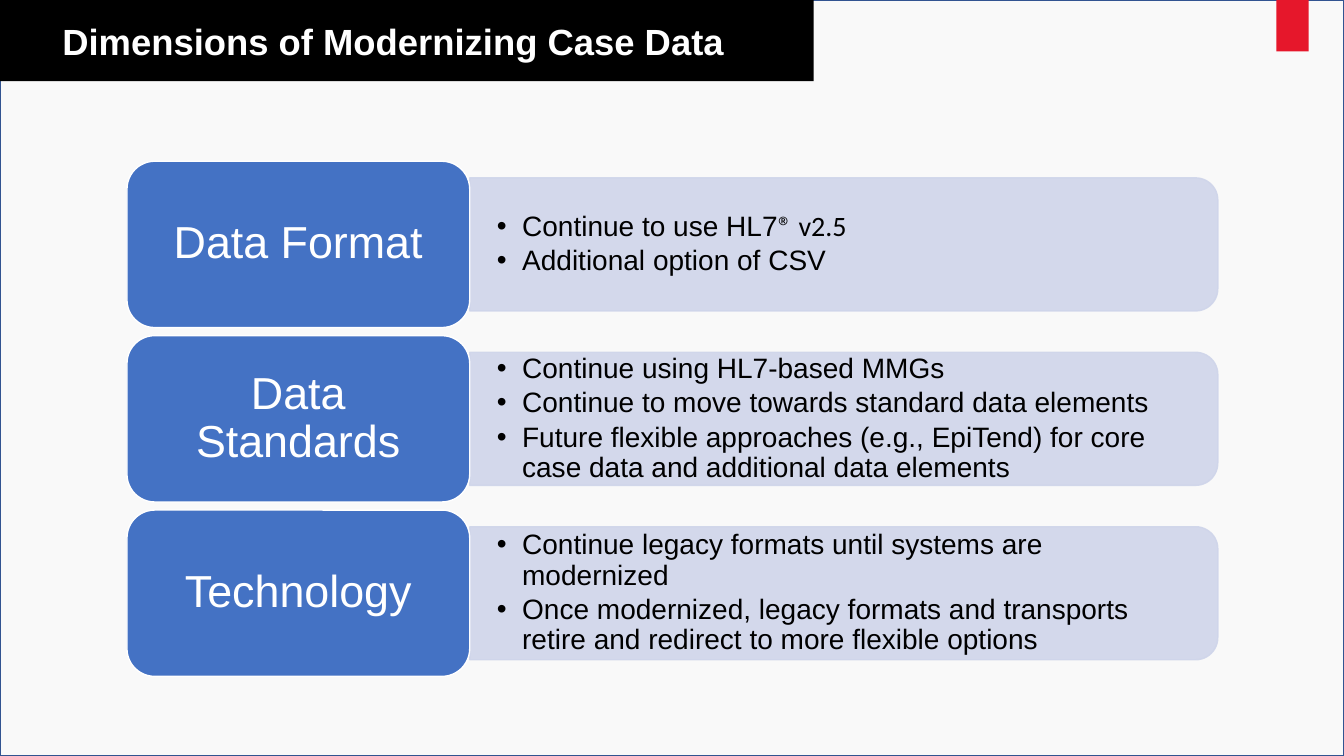
import pptx
import pptx.dml.color
import pptx.enum.shapes
import pptx.enum.text
import pptx.oxml.ns
import pptx.util
from lxml import etree

RGBColor = pptx.dml.color.RGBColor
MSO_SHAPE = pptx.enum.shapes.MSO_SHAPE
PP_ALIGN = pptx.enum.text.PP_ALIGN
qn = pptx.oxml.ns.qn
Inches = pptx.util.Inches
Pt = pptx.util.Pt

PAPER = RGBColor(0xF9, 0xF9, 0xF9)
FRAME = RGBColor(0x32, 0x54, 0x91)
RED = RGBColor(0xE6, 0x17, 0x2B)
BLACK = RGBColor(0x00, 0x00, 0x00)
WHITE = RGBColor(0xFF, 0xFF, 0xFF)
BLUE = RGBColor(0x44, 0x72, 0xC4)
PALE_BLUE = RGBColor(0xCF, 0xD5, 0xEA)

SLIDE_WIDTH = Inches(13.33)
SLIDE_HEIGHT = Inches(7.5)

# Row grid, in percent of the slide's width and height
FIRST_ROW, ROW_PITCH = 21.33, 23.07
CARD_LEFT, CARD_WIDTH, CARD_HEIGHT = 9.45, 25.5, 22
PANEL_LEFT, PANEL_WIDTH, PANEL_HEIGHT = 34.95, 55.66, 17.6

# Each bullet is a list of (text, font) runs
DIMENSIONS = [
    ("Data Format", [
        [("Continue to use HL7", "Arial"), ("® v2.5", "Calibri")],
        [("Additional option of CSV", "Arial")],
    ]),
    ("Data Standards", [
        [("Continue using HL7-based MMGs", "Arial")],
        [("Continue to move towards standard data elements", "Arial")],
        [("Future flexible approaches (e.g., EpiTend) for core case data "
          "and additional data elements", "Arial")],
    ]),
    ("Technology", [
        [("Continue legacy formats until systems are modernized", "Arial")],
        [("Once modernized, legacy formats and transports retire and "
          "redirect to more flexible options", "Arial")],
    ]),
]


def box(left, top, width, height):
    """Turn percentages of the slide into a left, top, width, height box."""
    return (round(SLIDE_WIDTH * left / 100), round(SLIDE_HEIGHT * top / 100),
            round(SLIDE_WIDTH * width / 100), round(SLIDE_HEIGHT * height / 100))


def add_block(slide, kind, place, fill, line=None):
    shape = slide.shapes.add_shape(kind, *place)
    shape.shadow.inherit = False
    shape.fill.solid()
    shape.fill.fore_color.rgb = fill
    if line is None:
        shape.line.fill.background()
    else:
        shape.line.color.rgb = line
        shape.line.width = Pt(1)
    return shape


def set_opacity(shape, percent):
    for color in shape.element.iter(qn("a:srgbClr")):
        etree.SubElement(color, qn("a:alpha"), val=str(percent * 1000))


def prepare_frame(shape, side, vertical):
    """Wrap and centre the text vertically, with insets in inches."""
    frame = shape.text_frame
    frame.word_wrap = True
    frame.vertical_anchor = pptx.enum.text.MSO_ANCHOR.MIDDLE
    frame.margin_left = frame.margin_right = Inches(side)
    frame.margin_top = frame.margin_bottom = Inches(vertical)
    return frame


def fill_paragraph(paragraph, runs, size, color, align=PP_ALIGN.LEFT, bold=False):
    paragraph.alignment = align
    paragraph.line_spacing = 0.9
    for text, font in runs:
        run = paragraph.add_run()
        run.text = text
        run.font.name = font
        run.font.size = Pt(size)
        run.font.bold = bold
        run.font.color.rgb = color


def add_bullet(paragraph):
    properties = paragraph._p.get_or_add_pPr()
    properties.set("marL", str(Inches(0.25)))
    properties.set("indent", str(-Inches(0.25)))
    etree.SubElement(properties, qn("a:buFont"), typeface="Arial")
    etree.SubElement(properties, qn("a:buChar"), char="•")


def add_title(slide, title):
    add_block(slide, MSO_SHAPE.RECTANGLE, box(0, 0, 60.54, 10.73), BLACK)
    frame = prepare_frame(slide.shapes.add_textbox(*box(3.9, 2, 55.14, 7.47)), 0.1, 0.05)
    fill_paragraph(frame.paragraphs[0], [(title, "Arial")], 26, WHITE, bold=True)


def add_panel(slide, top, bullets):
    """Add a pale panel, rounded on its right side, with a bulleted list."""
    left, top, width, height = place = box(PANEL_LEFT, top, PANEL_WIDTH, PANEL_HEIGHT)
    turn = (width - height) // 2
    upright = (left + turn, top - turn, height, width)
    panel = add_block(slide, MSO_SHAPE.ROUND_2_SAME_RECTANGLE, upright, PALE_BLUE, PALE_BLUE)
    panel.rotation = 90
    set_opacity(panel, 90)

    frame = prepare_frame(slide.shapes.add_textbox(*place), 0.27, 0)
    for index, runs in enumerate(bullets):
        paragraph = frame.add_paragraph() if index else frame.paragraphs[0]
        fill_paragraph(paragraph, runs, 20, BLACK)
        paragraph.space_after = Pt(3)
        add_bullet(paragraph)


def add_card(slide, top, name):
    place = box(CARD_LEFT, top, CARD_WIDTH, CARD_HEIGHT)
    card = add_block(slide, MSO_SHAPE.ROUNDED_RECTANGLE, place, BLUE, WHITE)
    frame = prepare_frame(card, 0.13, 0.07)
    fill_paragraph(frame.paragraphs[0], [(name, "Arial")], 32, WHITE, PP_ALIGN.CENTER)


def main():
    presentation = pptx.Presentation()
    presentation.slide_width = SLIDE_WIDTH
    presentation.slide_height = SLIDE_HEIGHT
    slide = presentation.slides.add_slide(presentation.slide_layouts[6])
    slide.background.fill.solid()
    slide.background.fill.fore_color.rgb = PAPER

    add_block(slide, MSO_SHAPE.RECTANGLE, box(0, 0, 100, 100), PAPER, FRAME)
    add_block(slide, MSO_SHAPE.RECTANGLE, box(94.97, 0, 2.4, 6.8), RED)
    add_title(slide, "Dimensions of Modernizing Case Data")
    for row, (name, bullets) in enumerate(DIMENSIONS):
        top = FIRST_ROW + row * ROW_PITCH
        add_panel(slide, top + (CARD_HEIGHT - PANEL_HEIGHT) / 2, bullets)
        add_card(slide, top, name)
    presentation.save("out.pptx")


if __name__ == "__main__":
    main()
